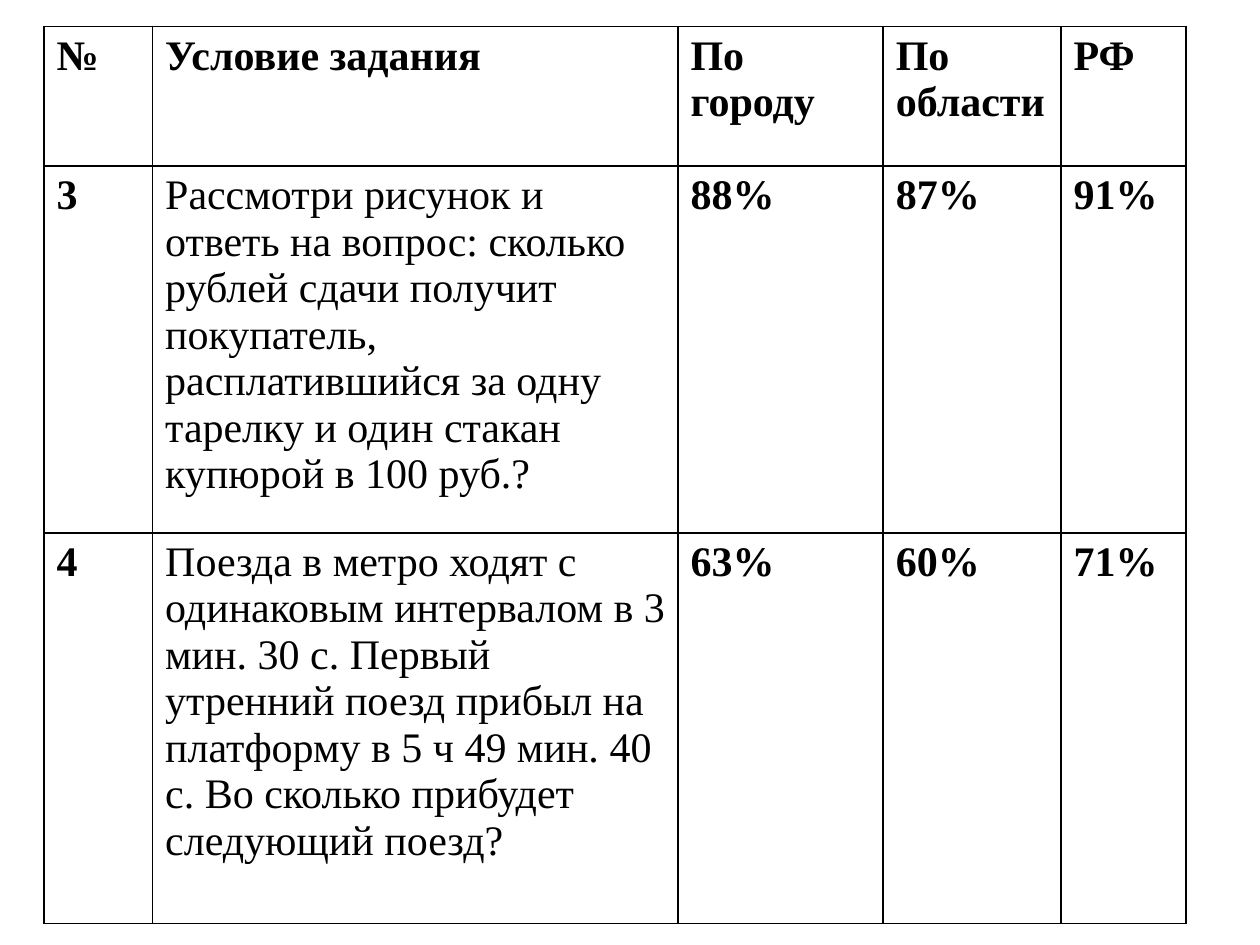
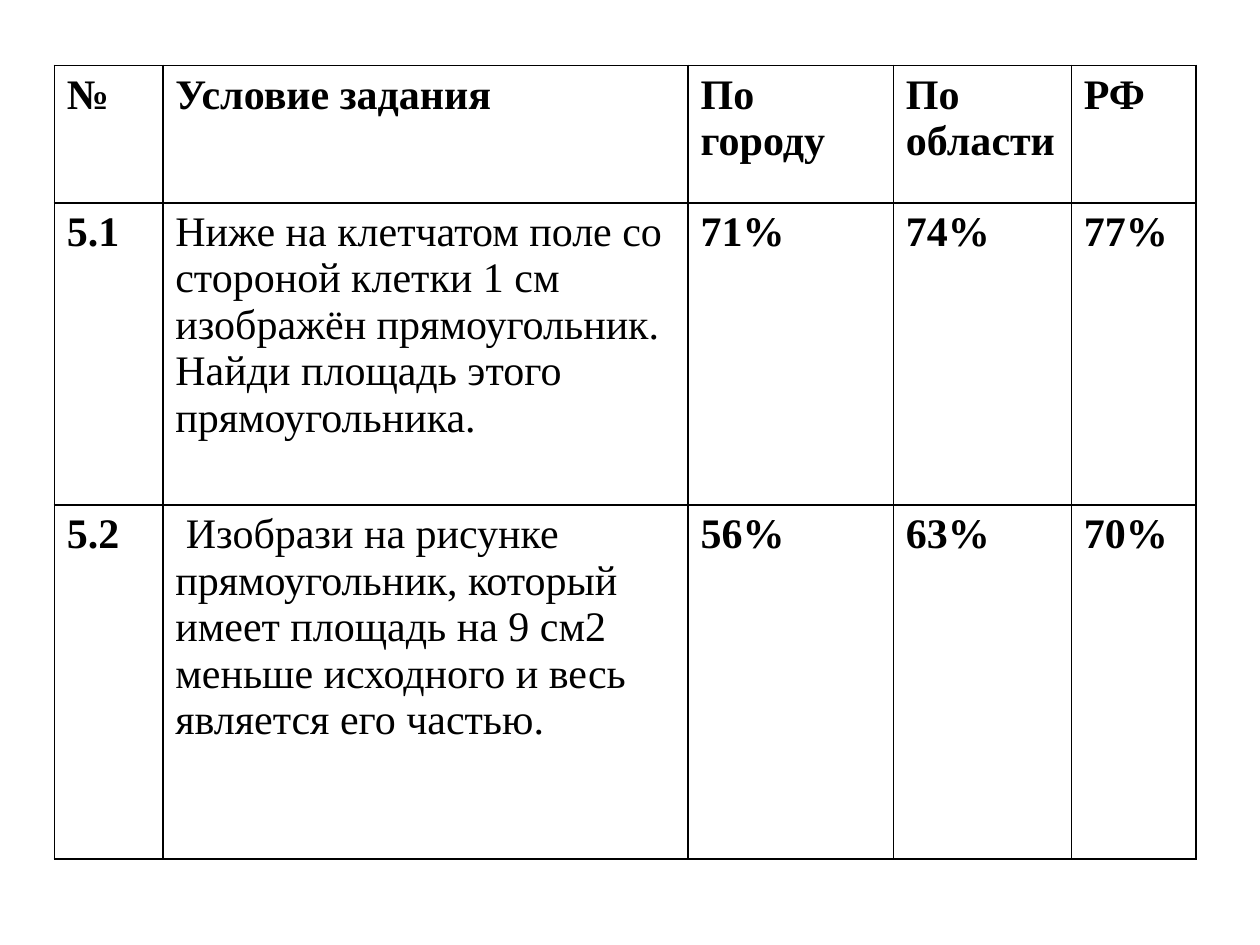
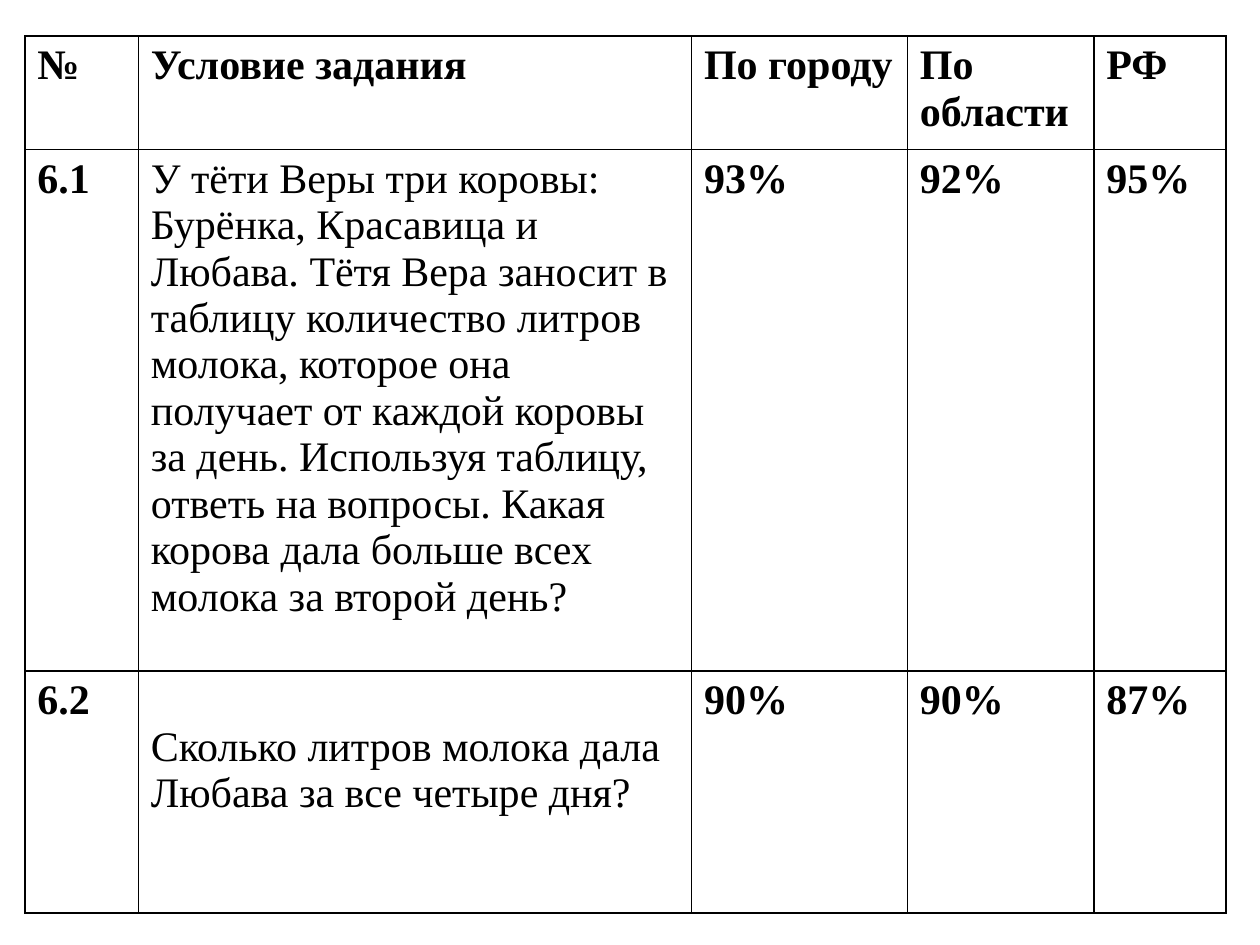
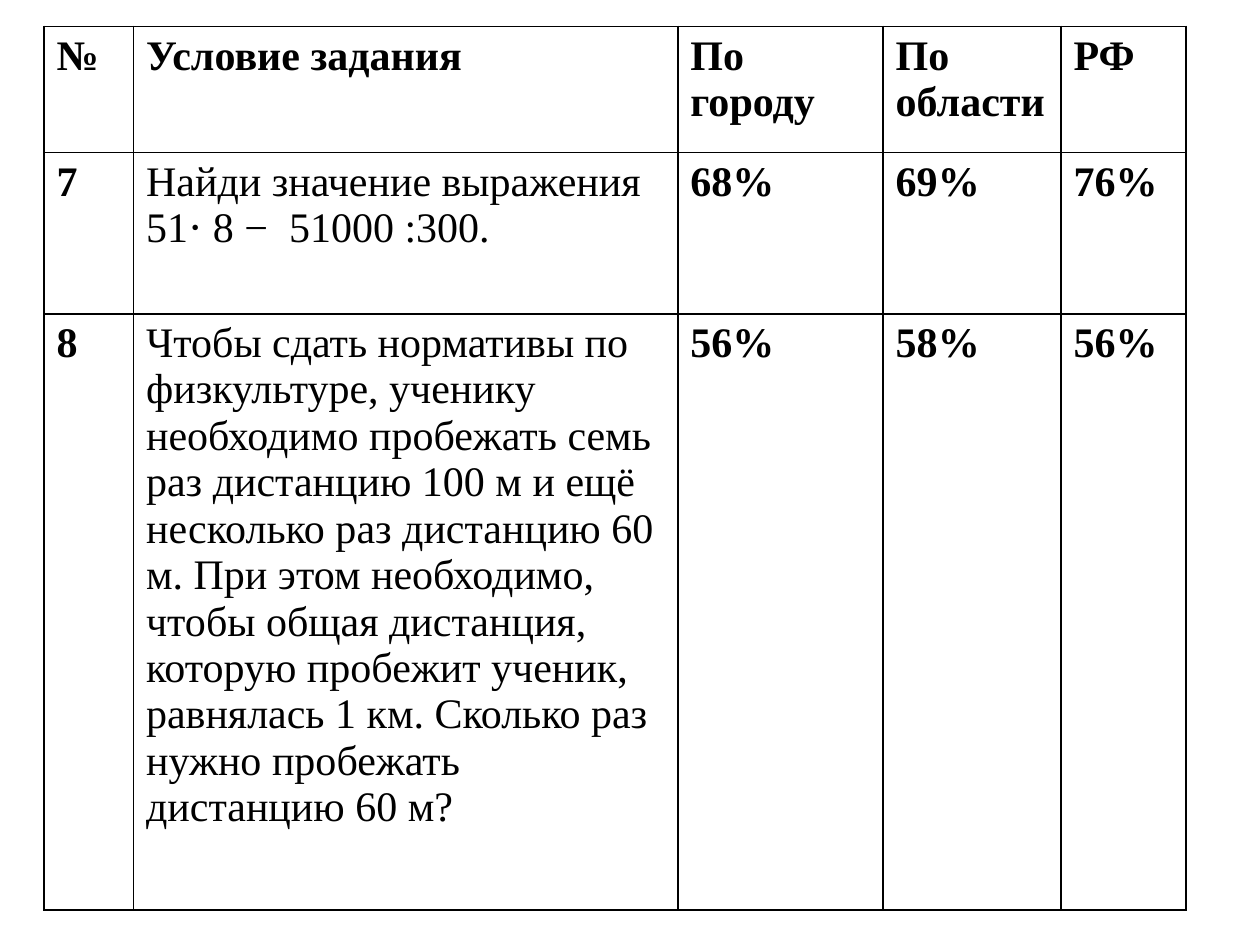
from lxml import etree
from pptx import Presentation
from pptx.dml.color import RGBColor
from pptx.oxml import ns
from pptx.util import Pt

BLACK = RGBColor(0x00, 0x00, 0x00)
FONT = "Times New Roman"
FONT_SIZE = 24
BORDER_WIDTH = 1
BLANK_LAYOUT = 6
LINE_HEIGHT = 26.6

HEADER = ["№", "Условие задания", "По городу", "По области", "РФ"]
TASK_COLUMN = HEADER.index("Условие задания")

REGULAR_COLUMNS = [62, 300.2, 117.3, 101.7, 71.3]
WIDE_COLUMNS = [64.8, 316.1, 123.4, 106.6, 75.6]
NARROW_NUMBER_COLUMNS = [51.1, 311.1, *REGULAR_COLUMNS[2:]]

# One entry per slide: top left corner, column widths, row heights, tasks.
RESULTS = [
    {
        "corner": (25.2, 15.1),
        "columns": REGULAR_COLUMNS,
        "rows": [79.9, 209.5, 223.2],
        "tasks": [
            ["3", "Рассмотри рисунок и ответь на вопрос: сколько рублей сдачи "
             "получит покупатель, расплатившийся за одну тарелку и один стакан "
             "купюрой в 100 руб.?", "88%", "87%", "91%"],
            ["4", "Поезда в метро ходят с одинаковым интервалом в 3 мин. 30 с. "
             "Первый утренний поезд прибыл на платформу в 5 ч 49 мин. 40 с. "
             "Во сколько прибудет следующий поезд?", "63%", "60%", "71%"],
        ],
    },
    {
        "corner": (31, 37.4),
        "columns": REGULAR_COLUMNS,
        "rows": [78.5, 172.8, 202.3],
        "tasks": [
            ["5.1", "Ниже на клетчатом поле со стороной клетки 1 см изображён "
             "прямоугольник. Найди площадь этого прямоугольника.",
             "71%", "74%", "77%"],
            ["5.2", " Изобрази на рисунке прямоугольник, который имеет площадь "
             "на 9 см2 меньше исходного и весь является его частью.",
             "56%", "63%", "70%"],
        ],
    },
    {
        "corner": (14.2, 20.6),
        "columns": WIDE_COLUMNS,
        "rows": [64.8, 298, 138.2],
        "tasks": [
            ["6.1", "У тёти Веры три коровы: Бурёнка, Красавица и Любава. Тётя "
             "Вера заносит в таблицу количество литров молока, которое она "
             "получает от каждой коровы за день. Используя таблицу, ответь на "
             "вопросы. Какая корова дала больше всех молока за второй день?",
             "93%", "92%", "95%"],
            ["6.2", "Сколько литров молока дала Любава за все четыре дня?",
             "90%", "90%", "87%"],
        ],
        "lowered_rows": [2],
    },
    {
        "corner": (25.2, 15.1),
        "columns": NARROW_NUMBER_COLUMNS,
        "rows": [72, 92.2, 340.6],
        "tasks": [
            ["7", "Найди значение выражения\n51⋅ 8 −  51000 :300.",
             "68%", "69%", "76%"],
            ["8", "Чтобы сдать нормативы по физкультуре, ученику необходимо "
             "пробежать семь раз дистанцию 100 м и ещё несколько раз дистанцию "
             "60 м. При этом необходимо, чтобы общая дистанция, которую "
             "пробежит ученик, равнялась 1 км. Сколько раз нужно пробежать "
             "дистанцию 60 м?", "56%", "58%", "56%"],
        ],
    },
]


class Deck:
    """Holds the shared style and the slide being filled."""

    def __init__(self):
        self.presentation = Presentation()
        self.presentation.slide_width = Pt(720)
        self.presentation.slide_height = Pt(540)
        self.slide = None

    def add_slide(self):
        layout = self.presentation.slide_layouts[BLANK_LAYOUT]
        self.slide = self.presentation.slides.add_slide(layout)

    def add_results_table(self, corner, columns, rows, tasks, lowered_rows=()):
        """Add the table; task texts in lowered_rows start one line lower."""
        left, top = corner
        table = self.slide.shapes.add_table(
            len(rows), len(columns), Pt(left), Pt(top),
            Pt(sum(columns)), Pt(sum(rows))).table
        table.first_row = table.horz_banding = False
        for column, width in zip(table.columns, columns):
            column.width = Pt(width)
        for row, height in zip(table.rows, rows):
            row.height = Pt(height)
        for row_index, values in enumerate([HEADER, *tasks]):
            for column_index, value in enumerate(values):
                is_task = row_index > 0 and column_index == TASK_COLUMN
                cell = table.cell(row_index, column_index)
                self.fill_cell(cell, value, bold=not is_task)
                if is_task and row_index in lowered_rows:
                    cell.margin_top = Pt(3.6 + LINE_HEIGHT)

    def fill_cell(self, cell, value, bold):
        cell.text_frame.text = value
        for paragraph in cell.text_frame.paragraphs:
            for run in paragraph.runs:
                run.font.name = FONT
                run.font.size = Pt(FONT_SIZE)
                run.font.bold = bold
                run.font.color.rgb = BLACK
        self.draw_borders(cell)
        cell.fill.background()

    def draw_borders(self, cell):
        properties = cell._tc.get_or_add_tcPr()
        for side in ("L", "R", "T", "B"):
            line = etree.SubElement(
                properties, ns.qn(f"a:ln{side}"), w=str(Pt(BORDER_WIDTH)))
            fill = etree.SubElement(line, ns.qn("a:solidFill"))
            etree.SubElement(fill, ns.qn("a:srgbClr"), val=str(BLACK))


def main():
    deck = Deck()
    for result in RESULTS:
        deck.add_slide()
        deck.add_results_table(**result)
    deck.presentation.save("out.pptx")


if __name__ == "__main__":
    main()
